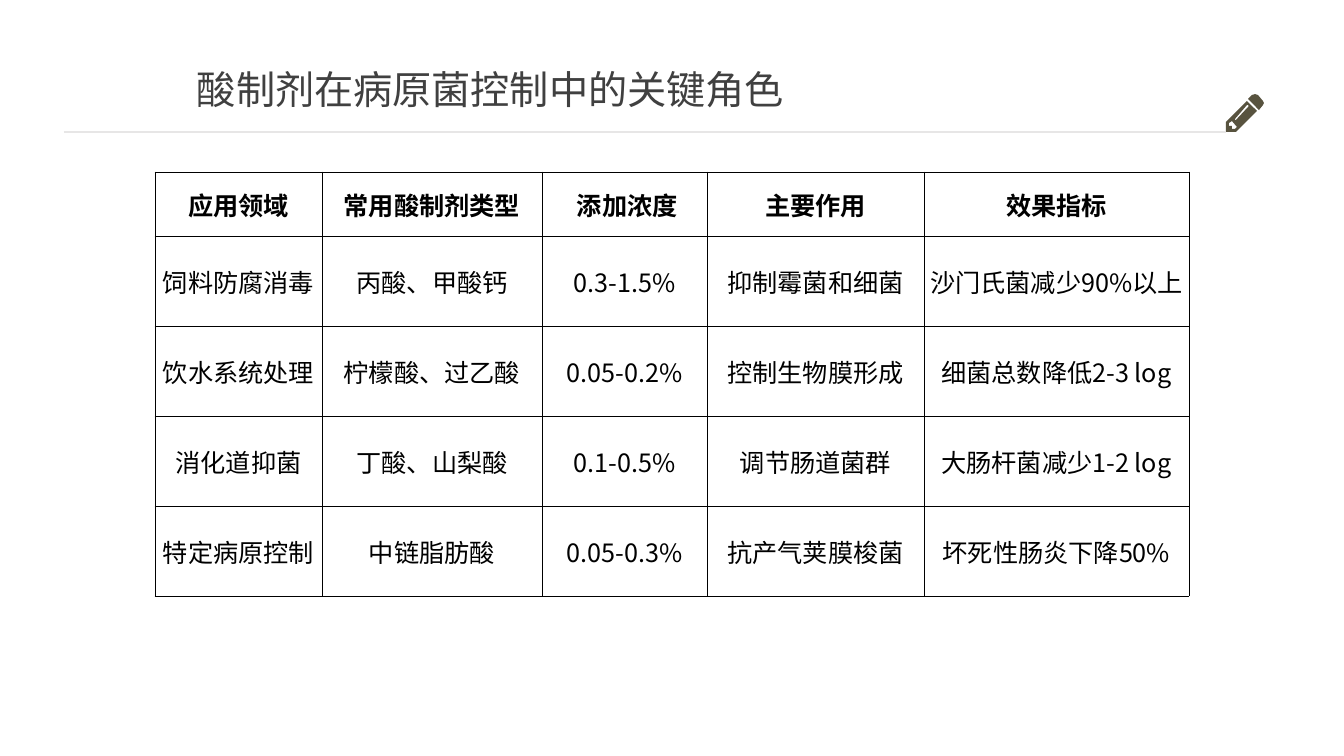
"""Build the slide on acidifiers in pathogen control: title, rule, pencil and table."""
from lxml import etree
from pptx import Presentation
from pptx import util as u
from pptx.dml.color import RGBColor
from pptx.enum import shapes, text
from pptx.oxml import ns

PX = u.Inches(1) / 100.8
FONT = "Noto Sans CJK SC"

TITLE = "酸制剂在病原菌控制中的关键角色"
ROWS = [
    ("应用领域", "常用酸制剂类型", " 添加浓度", "主要作用", "效果指标"),
    ("饲料防腐消毒", "丙酸、甲酸钙", "0.3-1.5%", "抑制霉菌和细菌", "沙门氏菌减少90%以上"),
    ("饮水系统处理", "柠檬酸、过乙酸", "0.05-0.2%", "控制生物膜形成", "细菌总数降低2-3 log"),
    ("消化道抑菌", "丁酸、山梨酸", "0.1-0.5%", "调节肠道菌群", "大肠杆菌减少1-2 log"),
    ("特定病原控制", "中链脂肪酸", "0.05-0.3%", "抗产气荚膜梭菌", "坏死性肠炎下降50%"),
]
COLUMN_WIDTHS = [167, 220, 165, 217, 265]
ROW_HEIGHTS = [64] + [90] * 4

PENCIL_CAP = [
    [(1255, 94), (1258, 95), (1263, 101), (1264, 103), (1263, 105),
     (1259, 110), (1248, 99), (1252, 95)],
]
PENCIL_BODY = [
    [(1247, 101), (1257, 111), (1236, 132), (1226, 132), (1226, 122)],
    [(1248, 105), (1247, 105), (1235, 119), (1235, 120), (1236, 120), (1249, 106)],
    [(1232, 121), (1229, 123), (1229, 126), (1232, 126), (1232, 129),
     (1235, 129), (1237, 127)],
]


def px(length):
    return u.Emu(round(length * PX))


def color(value):
    return RGBColor.from_string(value)


def write(frame, words, size, ink, bold=False, align=text.PP_ALIGN.LEFT):
    paragraph = frame.paragraphs[0]
    paragraph.text = words
    paragraph.alignment = align
    font = paragraph.font
    font.name, font.size, font.bold = FONT, u.Pt(size), bold
    font.color.rgb = color(ink)
    defaults = paragraph._p.pPr.find(ns.qn("a:defRPr"))
    etree.SubElement(defaults, ns.qn("a:ea"), typeface=FONT)


def add_outline(slide, contours, fill):
    first, *holes = contours
    builder = slide.shapes.build_freeform(*first[0], scale=PX)
    builder.add_line_segments(first[1:], close=True)
    for hole in holes:
        builder.move_to(*hole[0])
        builder.add_line_segments(hole[1:], close=True)
    shape = builder.convert_to_shape()
    shape.shadow.inherit = False
    shape.fill.solid()
    shape.fill.fore_color.rgb = color(fill)
    shape.line.fill.background()


def add_rule(slide):
    rule = slide.shapes.add_connector(
        shapes.MSO_CONNECTOR.STRAIGHT, px(64), px(132), px(1226), px(132))
    rule.line.color.rgb = color("E7E6E6")
    rule.line.width = u.Pt(2)
    etree.SubElement(rule._element.spPr, ns.qn("a:effectLst"))


def add_title(slide):
    frame = slide.shapes.add_textbox(px(187), px(60), px(631), px(57)).text_frame
    frame.word_wrap = True
    frame.vertical_anchor = text.MSO_ANCHOR.MIDDLE
    write(frame, TITLE, 28, "404040")


def set_borders(cell):
    properties = cell._tc.get_or_add_tcPr()
    for position, side in enumerate(("lnL", "lnR", "lnT", "lnB")):
        line = etree.Element(ns.qn(f"a:{side}"), w=str(u.Pt(0.5)))
        fill = etree.SubElement(line, ns.qn("a:solidFill"))
        etree.SubElement(fill, ns.qn("a:srgbClr"), val="000000")
        properties.insert(position, line)


def add_table(slide):
    table = slide.shapes.add_table(
        len(ROWS), len(COLUMN_WIDTHS), px(155), px(172),
        px(sum(COLUMN_WIDTHS)), px(sum(ROW_HEIGHTS))).table
    table.first_row = table.horz_banding = False
    for column, width in zip(table.columns, COLUMN_WIDTHS):
        column.width = px(width)
    for index, (row, height) in enumerate(zip(table.rows, ROW_HEIGHTS)):
        row.height = px(height)
        for cell, words in zip(row.cells, ROWS[index]):
            cell.fill.background()
            cell.vertical_anchor = text.MSO_ANCHOR.MIDDLE
            cell.margin_left = cell.margin_right = cell.margin_top = px(1)
            cell.margin_bottom = 0
            write(cell.text_frame, words, 18, "000000", index == 0,
                  text.PP_ALIGN.CENTER)
            set_borders(cell)


def main():
    presentation = Presentation()
    presentation.slide_width, presentation.slide_height = px(1344), px(756)
    slide = presentation.slides.add_slide(presentation.slide_layouts[6])
    for contours in (PENCIL_CAP, PENCIL_BODY):
        add_outline(slide, contours, "58533F")
    add_rule(slide)
    add_title(slide)
    add_table(slide)
    presentation.save("out.pptx")


if __name__ == "__main__":
    main()
